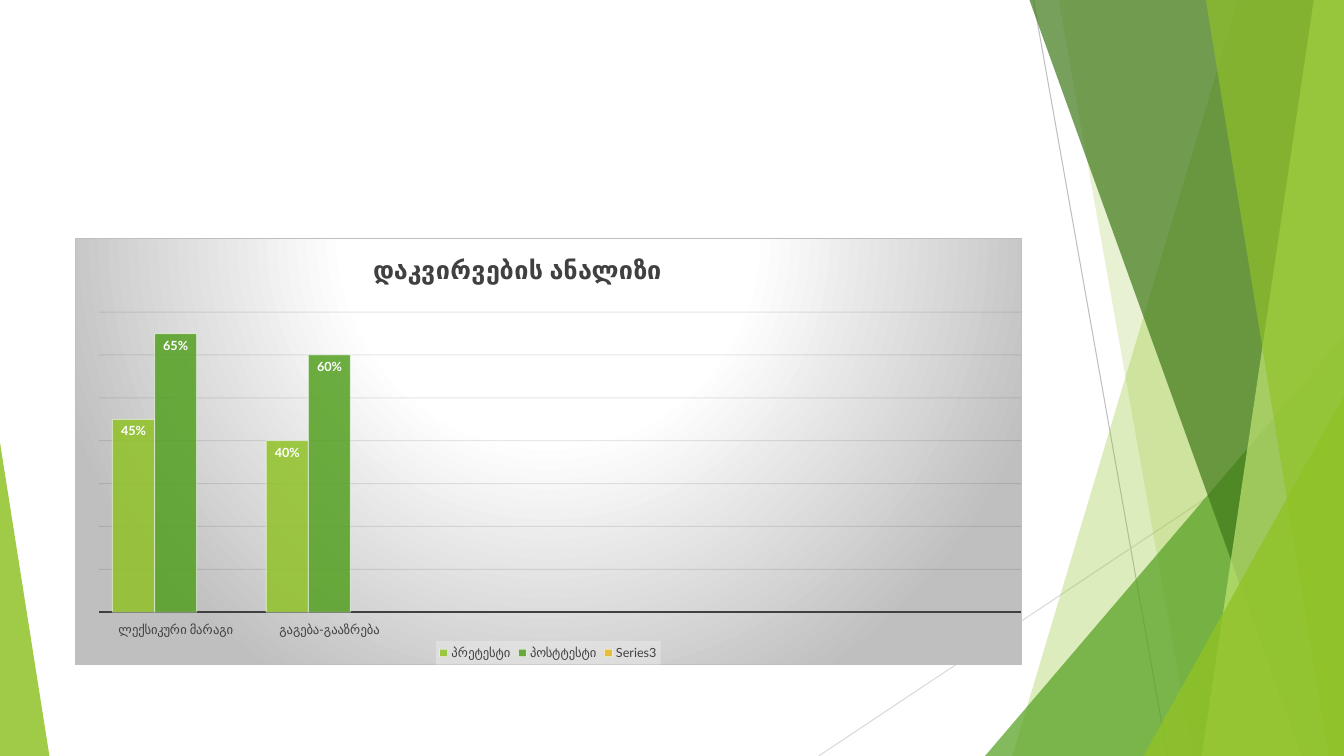
from lxml import etree
from pptx import Presentation
from pptx.chart.data import CategoryChartData
from pptx.dml.color import RGBColor
from pptx.enum.chart import XL_CHART_TYPE as ChartType
from pptx.enum.chart import XL_LABEL_POSITION as LabelPosition
from pptx.enum.chart import XL_LEGEND_POSITION as LegendPosition
from pptx.enum.chart import XL_TICK_LABEL_POSITION as TickLabelPosition
from pptx.enum.chart import XL_TICK_MARK as TickMark
from pptx.enum.shapes import MSO_CONNECTOR as Connector
from pptx.enum.shapes import MSO_SHAPE as Shape
from pptx.oxml import parse_xml
from pptx.oxml.ns import nsdecls, qn
from pptx.util import Inches, Pt

WIDTH, HEIGHT = 13.33, 7.5
FONT = "Lato"
COLORS = {
    "lime": "90C226", "green": "54A021", "forest": "3F7819",
    "pale": "C0E474", "gold": "E6B91E", "white": "FFFFFF",
    "silver": "BFBFBF", "light": "D9D9D9", "mist": "F2F2F2",
    "text": "404040", "grid": "0D0D0D",
}


def rgb(name):
    return RGBColor.from_string(COLORS[name])


def paint(fill, color, opacity=100):
    fill.solid()
    fill.fore_color.rgb = rgb(color)
    if opacity < 100:
        color_element = fill._xPr.find(qn("a:solidFill"))[0]
        alpha = etree.SubElement(color_element, qn("a:alpha"))
        alpha.set("val", str(opacity * 1000))


def set_line(line, color, width, opacity=100):
    paint(line.fill, color, opacity)
    line.width = Pt(width)


def set_font(font, color, size, bold=False):
    font.name = FONT
    font.size = Pt(size)
    font.bold = bold
    font.color.rgb = rgb(color)


# Background decoration
def add_line(slide, start, end, color):
    points = [Inches(value) for value in (*start, *end)]
    connector = slide.shapes.add_connector(Connector.STRAIGHT, *points)
    set_line(connector.line, color, 0.75)
    etree.SubElement(connector._element.spPr, qn("a:effectLst"))


def style_facet(shape, color, opacity):
    paint(shape.fill, color, opacity)
    shape.line.fill.background()
    shape.shadow.inherit = False


def add_band(slide, top_left, bottom_left, color, opacity, top_right=WIDTH):
    """A band from the slide's top to its bottom along the right edge."""
    builder = slide.shapes.build_freeform(Inches(top_left), 0)
    corners = [(top_right, 0), (WIDTH, HEIGHT), (bottom_left, HEIGHT)]
    builder.add_line_segments([(Inches(x), Inches(y)) for x, y in corners])
    style_facet(builder.convert_to_shape(), color, opacity)


def add_triangle(slide, left, top, width, apex, color, opacity):
    shape = slide.shapes.add_shape(
        Shape.ISOSCELES_TRIANGLE, Inches(left), Inches(top),
        Inches(width), Inches(HEIGHT - top))
    shape.adjustments[0] = apex
    style_facet(shape, color, opacity)


def add_facets(slide):
    add_line(slide, (10.25, 0), (11.58, HEIGHT), "silver")
    add_line(slide, (WIDTH, 4.03), (8.12, HEIGHT), "light")
    add_band(slide, 12.28, 10.04, "lime", 30)
    add_band(slide, 10.5, 11.83, "lime", 20)
    add_triangle(slide, 9.77, 3.33, 3.56, 1, "green", 72)
    add_band(slide, 10.21, 12.91, "forest", 70)
    add_band(slide, 13.03, 11.92, "pale", 70)
    add_band(slide, 11.96, 13.18, "lime", 65)
    add_triangle(slide, 11.34, 3.93, 1.99, 1, "lime", 80)
    add_triangle(slide, 0, 4.39, 0.49, 0, "lime", 85)


# Chart parts
def set_layout(parent, target=None, **fractions):
    layout = parent.find(qn("c:layout"))
    if layout is None:
        layout = etree.Element(qn("c:layout"))
        parent.insert(0, layout)
    manual = etree.SubElement(layout, qn("c:manualLayout"))
    settings = {"layoutTarget": target} if target else {}
    settings.update(xMode="edge", yMode="edge", **fractions)
    for tag, value in settings.items():
        etree.SubElement(manual, qn(f"c:{tag}")).set("val", str(value))


def fill_chart_area(chart):
    stops = [(0, "white"), (39, "white"), (100, "silver")]
    stop_xml = "".join(
        f'<a:gs pos="{place * 1000}"><a:srgbClr val="{COLORS[color]}"/></a:gs>'
        for place, color in stops)
    chart._chartSpace.find(qn("c:chart")).addnext(parse_xml(
        f'<c:spPr {nsdecls("c", "a")}><a:gradFill><a:gsLst>{stop_xml}</a:gsLst>'
        '<a:path path="circle"><a:fillToRect l="50000" t="-80000" r="50000"'
        ' b="180000"/></a:path></a:gradFill><a:ln w="9525"><a:solidFill>'
        f'<a:srgbClr val="{COLORS["silver"]}"/></a:solidFill></a:ln></c:spPr>'))


def style_title(chart):
    title = chart.chart_title
    title.text_frame.text = "დაკვირვების ანალიზი"
    set_font(title.text_frame.paragraphs[0].font, "text", 18, True)
    set_layout(title._element, x=0.31, y=0.02)


def style_axes(chart):
    category_axis = chart.category_axis
    category_axis.major_tick_mark = TickMark.NONE
    category_axis.tick_label_position = TickLabelPosition.LOW
    set_font(category_axis.tick_labels.font, "text", 9)
    set_line(category_axis.format.line, "text", 1.5)

    value_axis = chart.value_axis
    value_axis.minimum_scale, value_axis.maximum_scale = 0, 0.7
    value_axis.major_unit = 0.1
    value_axis.has_major_gridlines = True
    set_line(value_axis.major_gridlines.format.line, "grid", 0.75, 10)
    value_axis.visible = False


def style_legend(chart):
    chart.has_legend = True
    legend = chart.legend
    legend.position = LegendPosition.BOTTOM
    legend.include_in_layout = False
    set_font(legend.font, "text", 9)
    legend._element.find(qn("c:overlay")).addnext(parse_xml(
        f'<c:spPr {nsdecls("c", "a")}><a:solidFill>'
        f'<a:srgbClr val="{COLORS["mist"]}"><a:alpha val="39000"/></a:srgbClr>'
        '</a:solidFill></c:spPr>'))


def style_series(series, color):
    paint(series.format.fill, color, 85)
    set_line(series.format.line, "white", 0.75, 50)
    labels = series.data_labels
    labels.show_value = True
    labels.position = LabelPosition.INSIDE_END
    labels.number_format = "0%"
    labels.number_format_is_linked = False
    set_font(labels.font, "white", 9, True)


def add_results_chart(slide):
    data = CategoryChartData(number_format="0%")
    data.categories = ["ლექსიკური მარაგი", "გაგება-გააზრება"] + [""] * 4
    data.add_series("პრეტესტი", [0.45, 0.4] + [None] * 4)
    data.add_series("პოსტტესტი", [0.65, 0.6] + [None] * 4)
    data.add_series("Series3", [None] * 6)
    frame = slide.shapes.add_chart(
        ChartType.COLUMN_CLUSTERED, Inches(0.74), Inches(2.36),
        Inches(9.4), Inches(4.24), data)
    chart = frame.chart
    chart.font.name, chart.font.size = FONT, Pt(10)
    fill_chart_area(chart)
    style_title(chart)
    style_axes(chart)
    style_legend(chart)

    plot = chart.plots[0]
    plot.gap_width, plot.overlap = 65, 0
    plot.vary_by_categories = False
    for series, color in zip(plot.series, ("lime", "green", "gold")):
        style_series(series, color)
    plot_area = chart._chartSpace.find(".//" + qn("c:plotArea"))
    set_layout(plot_area, "inner", x=0.025, y=0.173, w=0.975, h=0.704)


def main():
    presentation = Presentation()
    presentation.slide_width = Inches(WIDTH)
    presentation.slide_height = Inches(HEIGHT)
    slide = presentation.slides.add_slide(presentation.slide_layouts[6])
    add_facets(slide)
    add_results_chart(slide)
    presentation.save("out.pptx")


if __name__ == "__main__":
    main()
